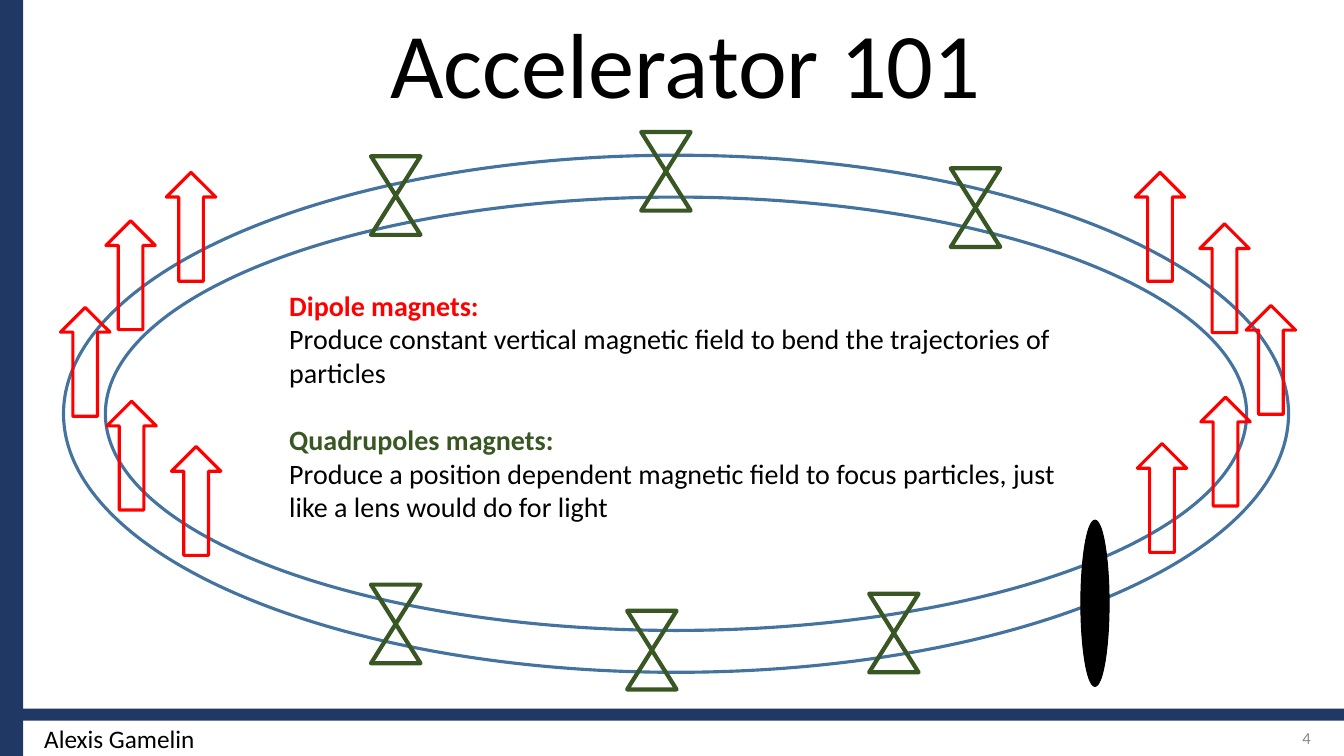
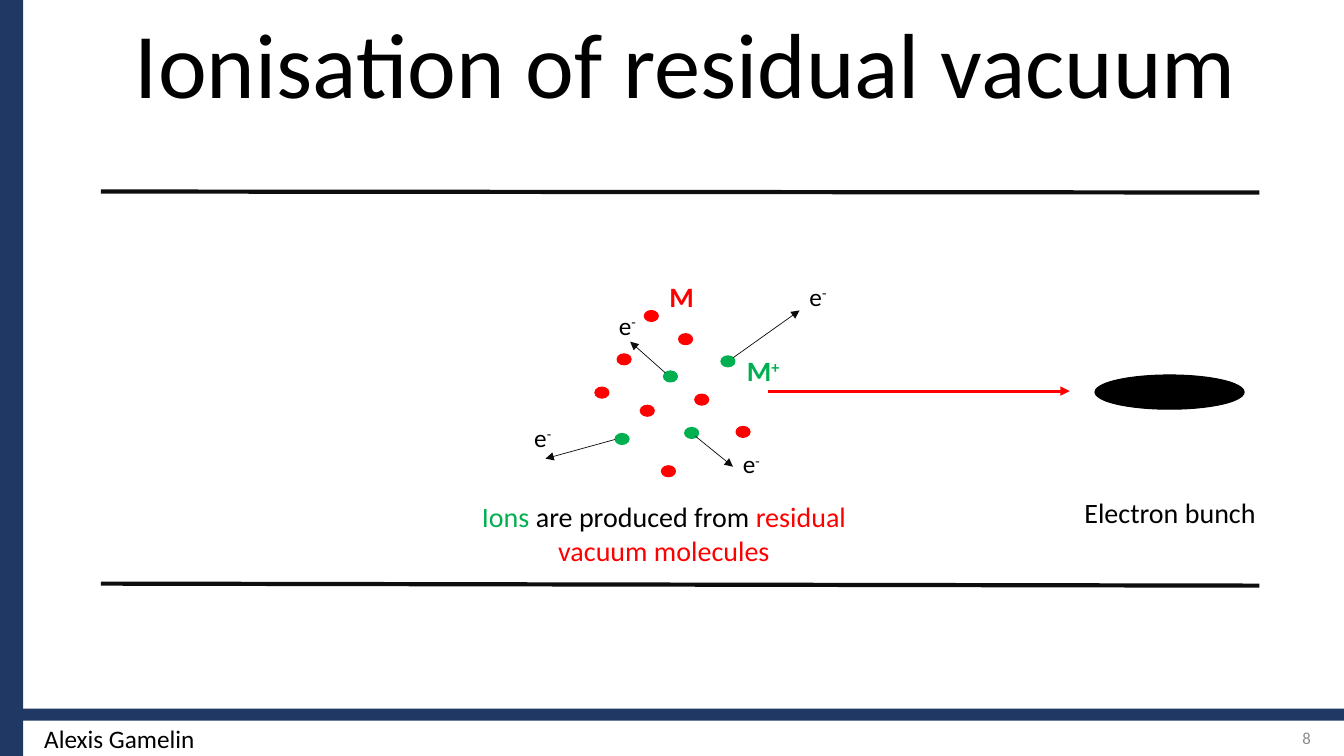
import dataclasses
import typing

import lxml.etree
import pptx
import pptx.dml.color
import pptx.enum.shapes
import pptx.enum.text
import pptx.oxml.ns
import pptx.util

Inches = pptx.util.Inches
Pt = pptx.util.Pt
Shape = pptx.enum.shapes.MSO_SHAPE
Align = pptx.enum.text.PP_ALIGN
Anchor = pptx.enum.text.MSO_ANCHOR

FONT = "Calibri"
NAVY, BLUE, GREY = "203864", "43739E", "8C8C8C"
BLACK, INK = "000000", "0D0D0D"
RED, GREEN, OLIVE = "FF0000", "00B050", "385723"


@dataclasses.dataclass
class Box:
    left: float
    top: float
    width: float
    height: float

    def emu(self) -> list:
        return [Inches(n) for n in (self.left, self.top, self.width, self.height)]


@dataclasses.dataclass
class Span:
    text: str
    color: str = BLACK
    bold: bool = False
    sup: bool = False


@dataclasses.dataclass
class Link:
    start: tuple[float, float]
    end: tuple[float, float]
    color: str = INK
    weight: float = 0.5
    arrow: bool = True


def rgb(color: str) -> pptx.dml.color.RGBColor:
    return pptx.dml.color.RGBColor.from_string(color)


def paint(shape, fill: typing.Optional[str], line: typing.Optional[str], weight: float) -> None:
    shape.shadow.inherit = False
    if fill:
        shape.fill.solid()
        shape.fill.fore_color.rgb = rgb(fill)
    else:
        shape.fill.background()
    if line:
        shape.line.color.rgb = rgb(line)
        shape.line.width = Pt(weight)
    else:
        shape.line.fill.background()


def draw(slide, kind, box: Box, fill: typing.Optional[str] = None,
         line: typing.Optional[str] = None, weight: float = 0.75):
    shape = slide.shapes.add_shape(kind, *box.emu())
    paint(shape, fill, line, weight)
    return shape


def write(slide, box: Box, lines: list[list[Span]], size: float, align=Align.LEFT,
          anchor=Anchor.TOP):
    """Add a text box with one paragraph for each list of spans."""
    frame = slide.shapes.add_textbox(*box.emu()).text_frame
    frame.word_wrap = True
    frame.vertical_anchor = anchor
    frame.text = "\n".join(spans[0].text for spans in lines)
    for para, spans in zip(frame.paragraphs, lines):
        para.alignment = align
        for span in spans[1:]:
            para.add_run().text = span.text
        for run, span in zip(para.runs, spans):
            run.font.name = FONT
            run.font.size = Pt(size)
            run.font.bold = span.bold
            run.font.color.rgb = rgb(span.color)
            if span.sup:
                run._r.get_or_add_rPr().set("baseline", "30000")
    return frame


def join(slide, link: Link) -> None:
    ends = [Inches(n) for n in (*link.start, *link.end)]
    line = slide.shapes.add_connector(pptx.enum.shapes.MSO_CONNECTOR.STRAIGHT, *ends)
    line.line.color.rgb = rgb(link.color)
    line.line.width = Pt(link.weight)
    qn = pptx.oxml.ns.qn
    props = line._element.spPr
    if link.arrow:
        lxml.etree.SubElement(props.find(qn("a:ln")), qn("a:tailEnd"), type="triangle")
    lxml.etree.SubElement(props, qn("a:effectLst"))


def lens(slide, left: float, top: float) -> None:
    """Draw a quadrupole as two triangles that meet tip to tip."""
    wide, high = 0.49, 0.78
    right, low = left + wide, top + high
    tip = (left + wide / 2, top + high / 2)

    def emu(*points: tuple[float, float]) -> list:
        return [(Inches(x), Inches(y)) for x, y in points]

    path = slide.shapes.build_freeform(Inches(left), Inches(top))
    path.add_line_segments(emu((right, top), tip), close=True)
    path.move_to(Inches(left), Inches(low))
    path.add_line_segments(emu((right, low), tip), close=True)
    paint(path.convert_to_shape(), None, OLIVE, 3)


def start(deck, title: str, number: int):
    """Add a blank slide with the bands, footer and title."""
    slide = deck.slides.add_slide(deck.slide_layouts[6])
    draw(slide, Shape.RECTANGLE, Box(0, 7.03, 13.33, 0.12), NAVY)
    draw(slide, Shape.RECTANGLE, Box(0, 0, 0.23, 7.5), NAVY)
    write(slide, Box(10.1, 7.12, 3, 0.4), [[Span(str(number), GREY)]], 12,
          Align.RIGHT, Anchor.MIDDLE)
    write(slide, Box(0.34, 7.13, 3.59, 0.4), [[Span("Alexis Gamelin")]], 18)
    head = write(slide, Box(0.5, 0.28, 12.6, 0.94), [[Span(title)]], 66,
                 Align.CENTER, Anchor.BOTTOM)
    head.paragraphs[0].line_spacing = 0.9
    return slide


def ring(deck) -> None:
    slide = start(deck, "Accelerator 101", 4)
    tube = draw(slide, Shape.DONUT, Box(0.63, 1.54, 12.15, 5.13), None, BLUE, 2.25)
    tube.adjustments[0] = 0.081

    dipoles = [(0.6, 3.05), (1.05, 2.19), (1.06, 3.98), (1.7, 4.43), (1.65, 1.71),
               (11.26, 1.71), (11.9, 2.22), (12.36, 3.03), (11.91, 3.94), (11.28, 4.4)]
    for left, top in dipoles:
        draw(slide, Shape.UP_ARROW, Box(left, top, 0.49, 1.08), None, RED, 2.25)

    body = write(slide, Box(2.77, 2.81, 8.02, 2.46), [
        [Span("Dipole magnets:", RED, bold=True)],
        [Span("Produce constant vertical magnetic field to bend the trajectories "
              "of particles")],
        [Span("Quadrupoles magnets:", OLIVE, bold=True)],
        [Span("Produce a position dependent magnetic field to focus particles, just "
              "like a lens would do for light")],
    ], 20)
    body.paragraphs[2].space_before = Pt(24)

    quads = [(3.68, 5.8), (6.22, 6.06), (8.62, 5.89), (3.68, 1.55), (9.43, 1.67),
             (6.36, 1.31)]
    for left, top in quads:
        lens(slide, left, top)
    draw(slide, Shape.OVAL, Box(10.72, 5.16, 0.28, 1.65), BLACK, BLACK)


def vacuum(deck) -> None:
    slide = start(deck, "Ionisation of residual vacuum", 8)
    for top, low in [(1.9, 1.91), (5.79, 5.81)]:
        join(slide, Link((1, top), (12.49, low), weight=3, arrow=False))
    draw(slide, Shape.OVAL, Box(10.86, 3.72, 1.48, 0.34), BLACK, BLACK)
    join(slide, Link((7.62, 3.88), (10.61, 3.88), RED, 2.25))

    dots = {
        RED: [(5.9, 3.84), (6.12, 3.51), (6.35, 4.02), (6.89, 3.91), (6.73, 3.31),
              (6.56, 4.62), (7.3, 4.23), (6.39, 3.08)],
        GREEN: [(6.1, 4.3), (6.58, 3.68), (6.79, 4.24), (7.15, 3.53)],
    }
    for color, spots in dots.items():
        for left, top in spots:
            draw(slide, Shape.OVAL, Box(left, top, 0.14, 0.11), color, color)

    write(slide, Box(10.63, 4.87, 1.95, 0.44), [[Span("Electron bunch")]], 20,
          Align.CENTER)
    write(slide, Box(4.46, 4.91, 4.25, 0.77), [[
        Span("Ions ", GREEN), Span("are produced from "),
        Span("residual vacuum molecules", RED)]], 20, Align.CENTER)

    freed = [
        (Link((7.27, 3.55), (7.93, 3.08)), (7.93, 2.74)),
        (Link((6.9, 4.33), (7.27, 4.63)), (7.27, 4.4)),
        (Link((6.6, 3.7), (6.25, 3.39)), (6.04, 3.03)),
        (Link((6.1, 4.36), (5.41, 4.55)), (5.2, 4.14)),
    ]
    for link, (left, top) in freed:
        join(slide, link)
        write(slide, Box(left, top, 0.59, 0.4), [[Span("e"), Span("-", sup=True)]], 18)

    write(slide, Box(6.54, 2.72, 0.5, 0.44), [[Span("M", RED, bold=True)]], 20)
    write(slide, Box(7.31, 3.46, 0.59, 0.44), [[
        Span("M", GREEN, bold=True), Span("+", GREEN, bold=True, sup=True)]], 20)


def main() -> None:
    deck = pptx.Presentation()
    deck.slide_width = Inches(13.33)
    deck.slide_height = Inches(7.5)
    ring(deck)
    vacuum(deck)
    deck.save("out.pptx")


if __name__ == "__main__":
    main()
